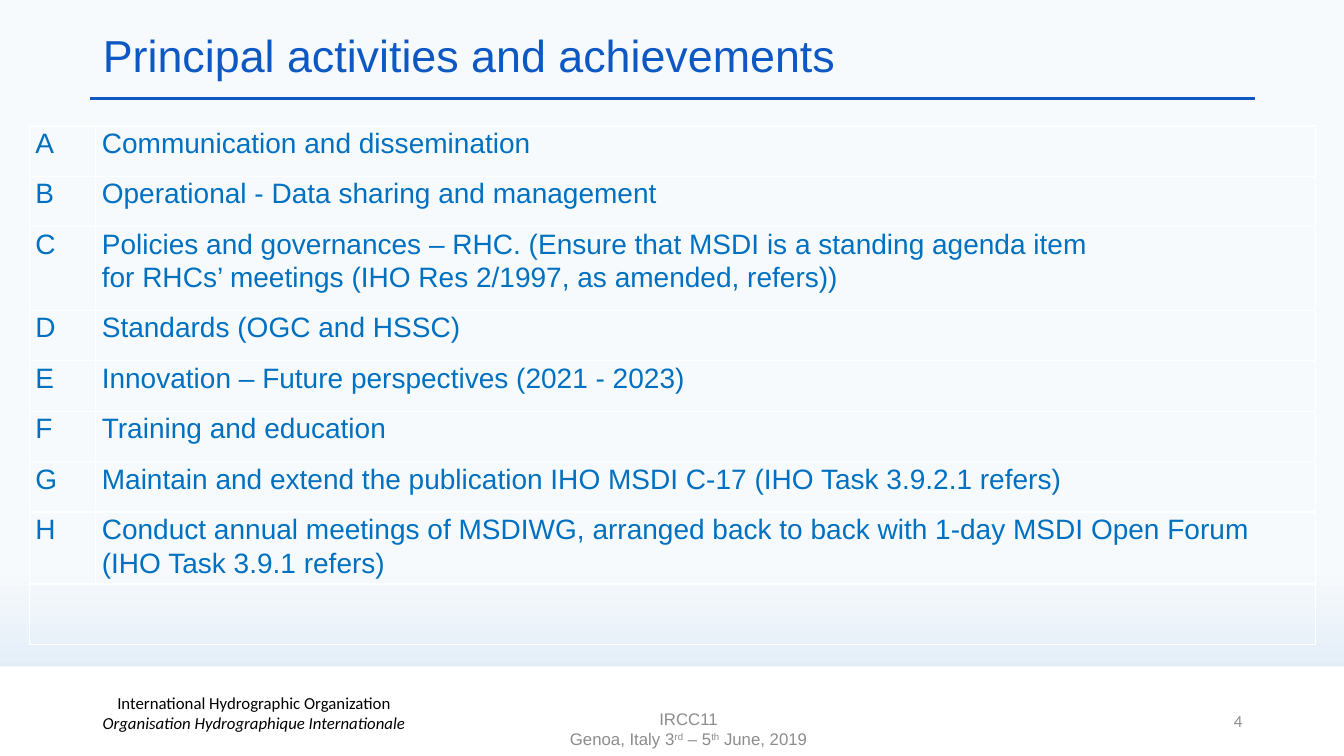
import pptx
import pptx.util
import pptx.dml.color
import pptx.enum.dml
import pptx.enum.shapes
import pptx.enum.text
import pptx.oxml
import pptx.oxml.ns
from lxml import etree

Inches, Pt = pptx.util.Inches, pptx.util.Pt
RGBColor = pptx.dml.color.RGBColor
ALIGN = pptx.enum.text.PP_ALIGN
MIDDLE = pptx.enum.text.MSO_ANCHOR.MIDDLE
qn = pptx.oxml.ns.qn

WHITE = RGBColor(0xFF, 0xFF, 0xFF)
BLACK = RGBColor(0, 0, 0)
GREY = RGBColor(0x8C, 0x8C, 0x8C)
TITLE_BLUE = RGBColor(0x0E, 0x58, 0xC4)
TABLE_BLUE = RGBColor(0x00, 0x70, 0xC0)
SKY_TOP = RGBColor(0xF7, 0xFA, 0xFD)
SKY_BOTTOM = RGBColor(0xD0, 0xE2, 0xF1)

# Activity and row height; letters follow the order
ACTIVITIES = [
    ("Communication and dissemination", 0.5),
    ("Operational - Data sharing and management", 0.5),
    ("Policies and governances – RHC. (Ensure that MSDI is a standing agenda item\v"
     "for RHCs’ meetings (IHO Res 2/1997, as amended, refers))", 0.83),
    ("Standards (OGC and HSSC)", 0.5),
    ("Innovation – Future perspectives (2021 - 2023)", 0.5),
    ("Training and education", 0.5),
    ("Maintain and extend the publication IHO MSDI C-17 (IHO Task 3.9.2.1 refers)", 0.5),
    ("Conduct annual meetings of MSDIWG, arranged back to back with 1-day MSDI "
     "Open Forum (IHO Task 3.9.1 refers)", 0.66),
]
EMPTY_ROW = 0.6


def style_font(font, size, name, color):
    font.size, font.name = Pt(size), name
    font.color.rgb = color


def set_background(s):
    fill = s.background.fill
    fill.gradient()
    fill.gradient_angle = 270
    for stop, position, color in zip(fill.gradient_stops, (0.75, 1), (SKY_TOP, SKY_BOTTOM)):
        stop.position = position
        stop.color.rgb = color


def add_rule(s, left, right, y):
    line = s.shapes.add_connector(pptx.enum.shapes.MSO_CONNECTOR.STRAIGHT,
                                  Inches(left), Inches(y), Inches(right), Inches(y))
    line.line.color.rgb = TITLE_BLUE
    line.line.width = Pt(2.25)
    etree.SubElement(line._element.spPr, qn("a:effectLst"))


def add_footer_band(s):
    band = s.shapes.add_shape(pptx.enum.shapes.MSO_SHAPE.RECTANGLE,
                              0, Inches(6.61), Inches(13.33), Inches(0.89))
    band.shadow.inherit = False
    band.fill.solid()
    band.fill.fore_color.rgb = WHITE
    band.line.fill.background()


def set_title(s, text):
    sp = s.shapes.title
    sp.left, sp.top, sp.width, sp.height = map(Inches, (0.92, 0.28, 11.5, 0.59))
    tf = sp.text_frame
    tf.text = text
    tf.vertical_anchor = MIDDLE
    p = tf.paragraphs[0]
    p.alignment, p.line_spacing = ALIGN.LEFT, 0.9
    style_font(p.runs[0].font, 32, "Arial", TITLE_BLUE)


def add_footer(s, left, top, width, lines, align, font_name, color):
    """Each line is a list of (text, style) runs; style is "", "italic" or "super"."""
    tf = s.shapes.add_textbox(Inches(left), Inches(top), Inches(width), Inches(0.4)).text_frame
    tf.word_wrap = True
    tf.vertical_anchor = MIDDLE
    p = tf.paragraphs[0]
    p.alignment = align
    for i, line in enumerate(lines):
        if i:
            p.add_line_break()
        for text, style in line:
            r = p.add_run()
            r.text = text
            style_font(r.font, 12, font_name, color)
            if style == "italic":
                r.font.italic = True
            elif style == "super":
                r._r.get_or_add_rPr().set("baseline", "30000")


def format_cell(cell):
    cell.margin_left = cell.margin_right = Inches(0.06)
    cell.margin_top = cell.margin_bottom = 0
    tc_pr = cell._tc.get_or_add_tcPr()
    for side in ("lnL", "lnR", "lnT", "lnB"):
        border = etree.SubElement(tc_pr, qn("a:" + side), w=str(Pt(1)))
        fill = etree.SubElement(border, qn("a:solidFill"))
        etree.SubElement(fill, qn("a:srgbClr"), val=str(WHITE))
    cell.fill.background()


def add_activity_table(s):
    heights = [height for _, height in ACTIVITIES] + [EMPTY_ROW]
    table = s.shapes.add_table(len(heights), 2, Inches(0.29), Inches(1.25),
                               Inches(12.76), Inches(sum(heights))).table
    table.first_row = table.horz_banding = False
    for column, width in zip(table.columns, (0.66, 12.1)):
        column.width = Inches(width)
    for row, height in zip(table.rows, heights):
        row.height = Inches(height)
        for cell in row.cells:
            format_cell(cell)
    for i, (activity, _) in enumerate(ACTIVITIES):
        for j, text in enumerate(("ABCDEFGH"[i], activity)):
            tf = table.cell(i, j).text_frame
            tf.text = text
            p = tf.paragraphs[0]
            p.line_spacing = 1.07
            for r in p.runs:
                style_font(r.font, 20, "Arial", TABLE_BLUE)
    last = len(heights) - 1
    table.cell(last, 0).merge(table.cell(last, 1))


def main():
    prs = pptx.Presentation()
    prs.slide_width, prs.slide_height = Inches(13.33), Inches(7.5)
    s = prs.slides.add_slide(prs.slide_layouts[5])

    # Background and frame
    set_background(s)
    add_rule(s, 0.89, 12.45, 0.98)
    add_footer_band(s)

    # Footer texts
    add_footer(s, 0.27, 6.87, 4.5,
               [[("International Hydrographic Organization", "")],
                [("Organisation Hydrographique Internationale", "italic")]],
               ALIGN.CENTER, "Calibri", BLACK)
    add_footer(s, 4.58, 7.03, 4.5,
               [[("IRCC11", "")],
                [("Genoa, Italy 3", ""), ("rd", "super"), (" – 5", ""),
                 ("th", "super"), (" June, 2019", "")]],
               ALIGN.CENTER, "Arial", GREY)
    add_footer(s, 9.42, 6.95, 3, [[("4", "")]], ALIGN.RIGHT, "Calibri", GREY)

    # Title and table
    set_title(s, "Principal activities and achievements")
    add_activity_table(s)
    prs.save("out.pptx")


if __name__ == "__main__":
    main()
